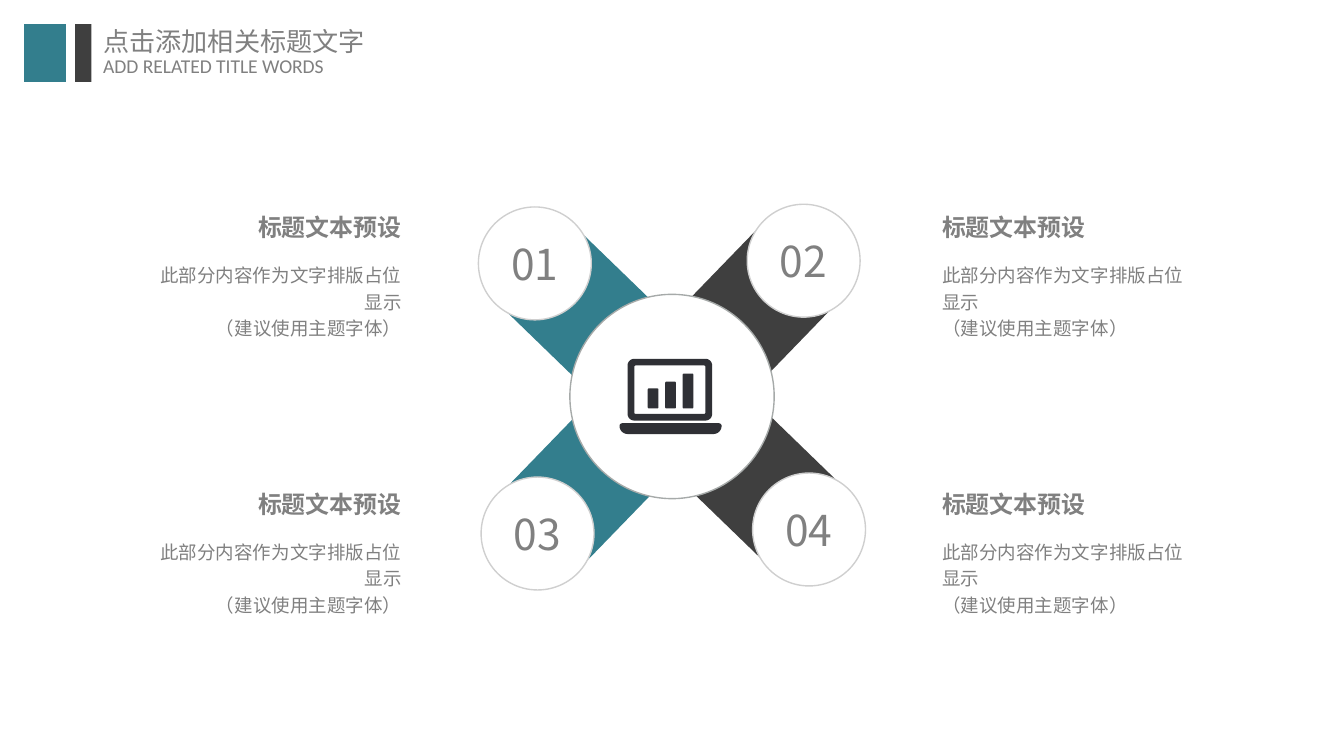
from copy import deepcopy
from math import cos, radians, sin

from pptx import Presentation
from pptx.dml.color import RGBColor
from pptx.enum.shapes import MSO_SHAPE as Preset
from pptx.enum.text import MSO_ANCHOR as Anchor, MSO_AUTO_SIZE as AutoSize, PP_ALIGN as Align
from pptx.oxml.ns import qn
from pptx.util import Inches, Pt

COLORS = {"teal": "337E8D", "dark": "3F3F3F", "text": "808080", "white": "FFFFFF",
          "ring": "CFCFCF", "hub": "A6AAA9", "icon": "2F3035"}
CJK = "Noto Sans CJK SC"
COLOR = {name: RGBColor.from_string(value) for name, value in COLORS.items()}

deck = Presentation()
deck.slide_width = Inches(10)
deck.slide_height = deck.slide_width * 9 // 16
page = deck.slides.add_slide(deck.slide_layouts[6])


def paint(shape, fill, line=None):
    shape.shadow.inherit = False
    shape.fill.solid()
    shape.fill.fore_color.rgb = COLOR[fill]
    if line:
        shape.line.color.rgb = COLOR[line]
        shape.line.width = Pt(0.75)
    else:
        shape.line.fill.background()


def write(shape, text, size, font=CJK, bold=None, align=Align.LEFT, spacing=None,
          inset=(0, 0), **frame_format):
    frame = shape.text_frame
    frame_format = {"word_wrap": True, "vertical_anchor": Anchor.TOP, **frame_format}
    for name, value in frame_format.items():
        setattr(frame, name, value)
    frame.margin_left = frame.margin_right = Inches(inset[0])
    frame.margin_top = frame.margin_bottom = Inches(inset[1])
    para = frame.paragraphs[0]
    para.text = text
    para.alignment, para.line_spacing = align, spacing
    for span in para.runs:
        for name, value in {"size": Pt(size), "bold": bold, "name": font}.items():
            setattr(span.font, name, value)
        span.font.color.rgb = COLOR["text"]
        east_asian = span._r.rPr.makeelement(qn("a:ea"), {"typeface": font})
        span._r.rPr.find(qn("a:latin")).addnext(east_asian)
    for line_break in para._p.findall(qn("a:br")):
        line_break.append(deepcopy(para.runs[0]._r.rPr))


for left, width, color in [(0.18, 0.31, "teal"), (0.56, 0.12, "dark")]:
    bar = page.shapes.add_shape(Preset.RECTANGLE, *map(Inches, (left, 0.18, width, 0.43)))
    paint(bar, color)

for top, width, height, text, size, font in [
    (0.14, 2.18, 0.34, "点击添加相关标题文字", 14, CJK),
    (0.35, 1.97, 0.29, "ADD RELATED TITLE WORDS", 10.5, "Calibri"),
]:
    box = page.shapes.add_textbox(*map(Inches, (0.67, top, width, height)))
    write(box, text, size, font, inset=(0.1, 0.05), word_wrap=False,
          auto_size=AutoSize.SHAPE_TO_FIT_TEXT)

arm_side, disc_size = Inches(0.81), Inches(0.84)
for number, color, arm_at, turn, disc_at in [
    ("02", "dark", (5.24, 1.87), 224.1, (5.56, 1.52)),
    ("04", "dark", (5.27, 3.2), 314.1, (5.6, 3.52)),
    ("03", "teal", (3.93, 3.22), 44.1, (3.58, 3.55)),
    ("01", "teal", (3.92, 1.89), 134.1, (3.56, 1.54)),
]:
    left, top = map(Inches, arm_at)
    right, bottom = left + arm_side, top + arm_side
    outline = page.shapes.build_freeform(left, top)
    outline.add_line_segments([(right, top), (right, bottom), (left, bottom)])
    arm = outline.convert_to_shape()
    arm.rotation = turn
    paint(arm, color)
    disc = page.shapes.add_shape(Preset.OVAL, *map(Inches, disc_at), disc_size, disc_size)
    paint(disc, "white", "ring")
    write(disc, number, 22.8, align=Align.CENTER, inset=(0.02, 0.02),
          vertical_anchor=Anchor.MIDDLE)

hub = page.shapes.add_shape(Preset.OVAL, *map(Inches, (4.24, 2.19, 1.52, 1.52)))
paint(hub, "white", "hub")

laptop = None
for left, top, right, bottom, top_radius, bottom_radius in [
    (4.61, 3.15, 5.37, 3.23, 0.02, 0.06),
    (4.82, 2.89, 4.9, 3.04, 0.01, 0.01),
    (4.95, 2.84, 5.03, 3.04, 0.01, 0.01),
    (5.08, 2.78, 5.16, 3.04, 0.01, 0.01),
    (4.72, 2.72, 5.25, 3.08, 0.01, 0.01),
    (4.67, 2.67, 5.3, 3.13, 0.05, 0.05),
]:
    points = []
    for x, y, radius, start in [
        (left + top_radius, top + top_radius, top_radius, 180),
        (right - top_radius, top + top_radius, top_radius, 270),
        (right - bottom_radius, bottom - bottom_radius, bottom_radius, 0),
        (left + bottom_radius, bottom - bottom_radius, bottom_radius, 90),
    ]:
        for step in range(0, 91, 15):
            angle = radians(start + step)
            points.append((Inches(x + radius * cos(angle)),
                           Inches(y + radius * sin(angle))))
    if laptop is None:
        laptop = page.shapes.build_freeform(*points[0])
    else:
        laptop.move_to(*points[0])
    laptop.add_line_segments(points[1:])
paint(laptop.convert_to_shape(), "icon")

for left, align in [(7.01, Align.LEFT), (1.09, Align.RIGHT)]:
    for top in (1.45, 3.51):
        body = page.shapes.add_textbox(*map(Inches, (left, top + 0.48, 1.9, 1.03)))
        write(body, "此部分内容作为文字排版占位显示\v（建议使用主题字体）", 9.93,
              align=align, spacing=1.2)
        heading = page.shapes.add_textbox(*map(Inches, (left, top, 1.9, 0.48)))
        write(heading, "标题文本预设", 12.8, bold=True, align=align, word_wrap=False,
              vertical_anchor=Anchor.MIDDLE)

deck.save("out.pptx")
